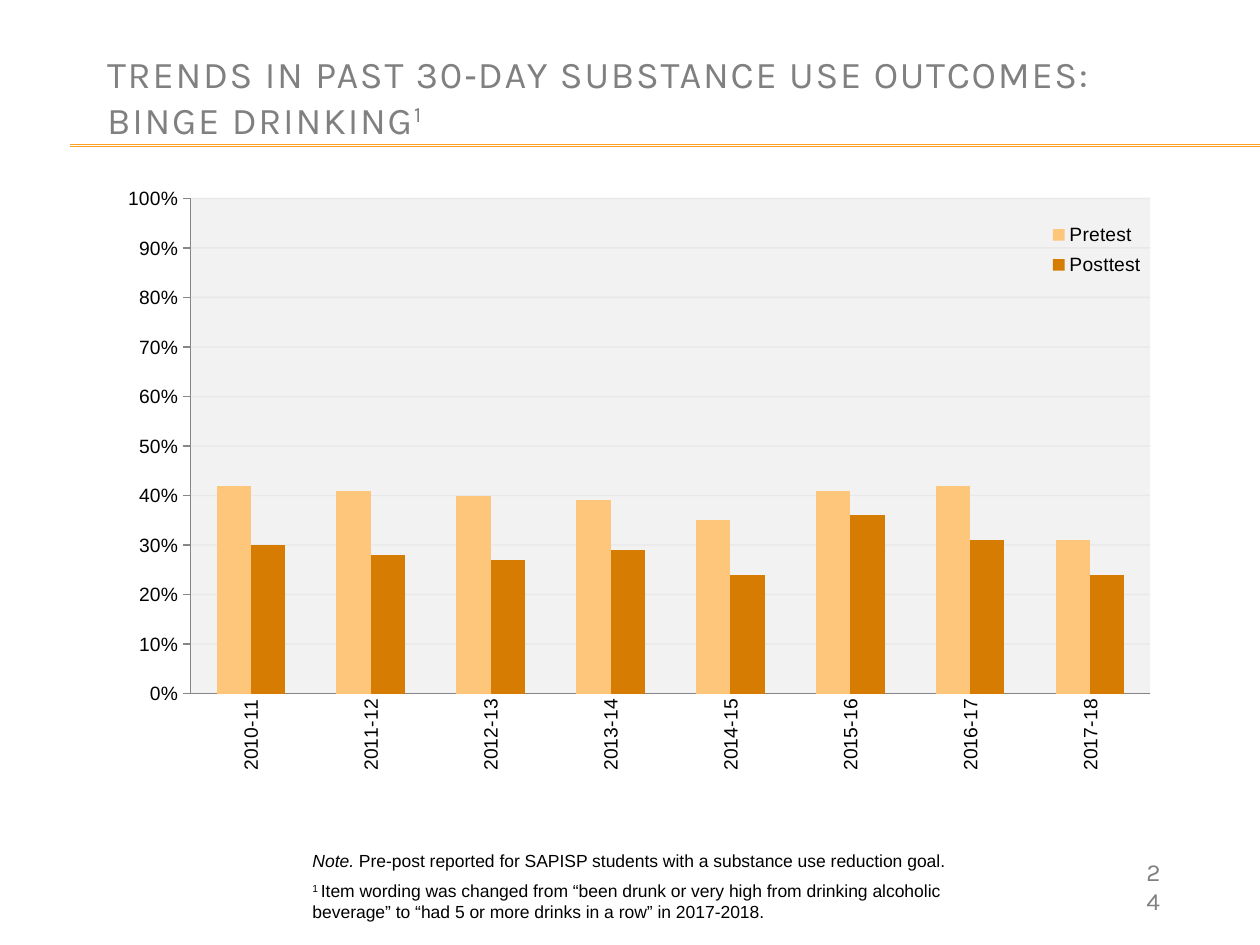
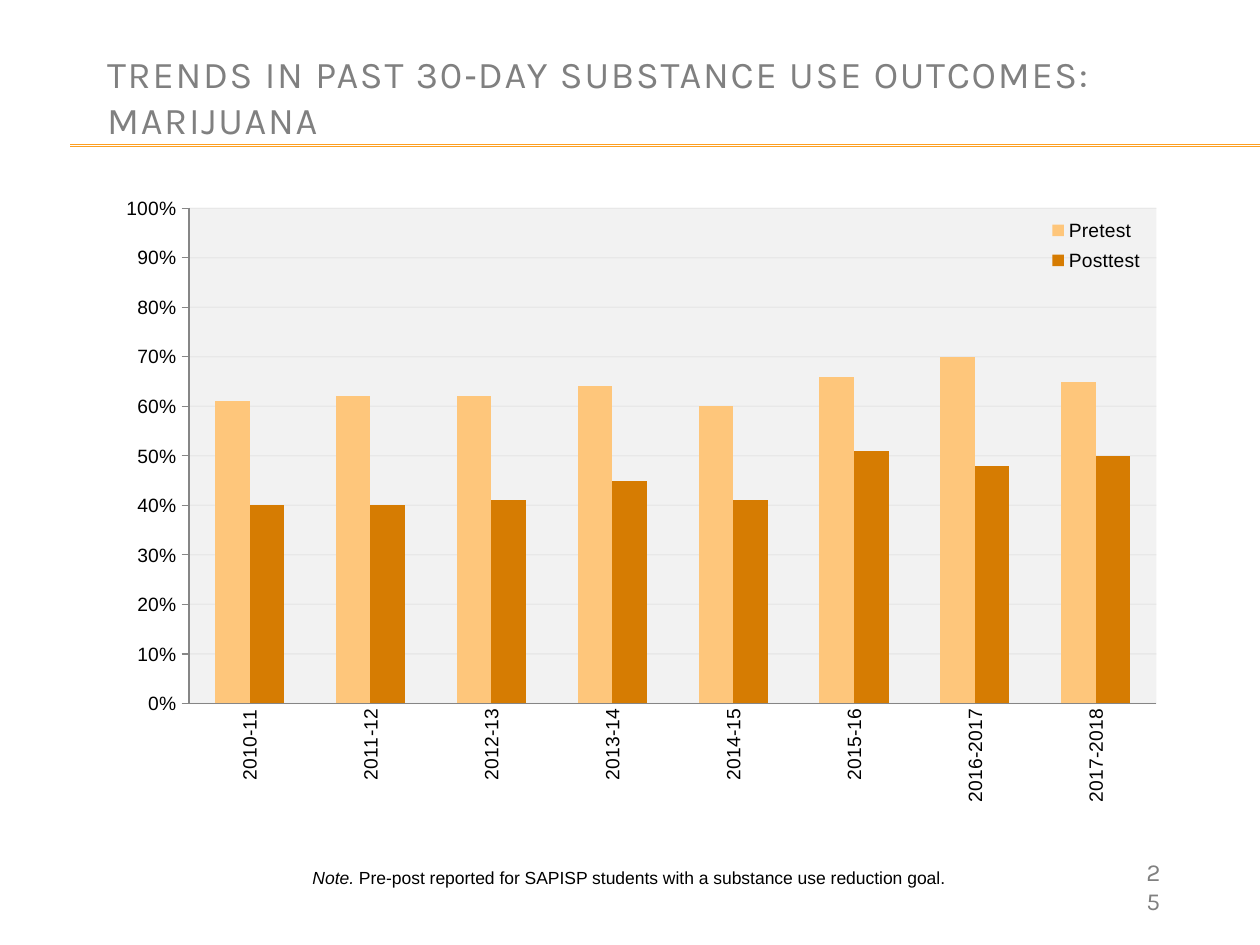
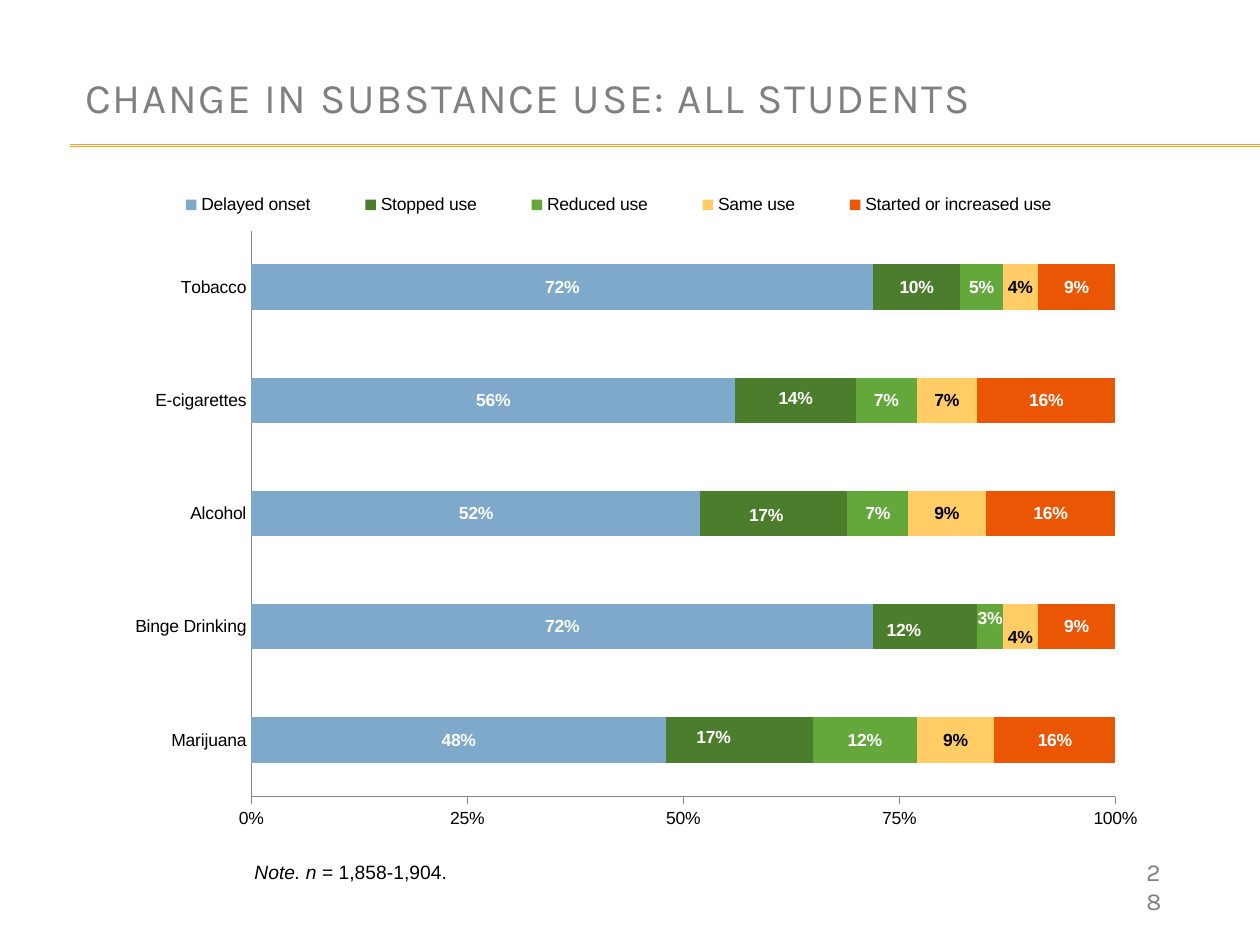
from dataclasses import dataclass

from lxml import etree
from pptx import Presentation
from pptx.chart.data import CategoryChartData
from pptx.dml.color import RGBColor
from pptx.enum.chart import XL_CHART_TYPE, XL_LEGEND_POSITION, XL_TICK_MARK
from pptx.enum.shapes import MSO_CONNECTOR
from pptx.enum.text import MSO_ANCHOR
from pptx.oxml.ns import qn
from pptx.util import Cm, Pt

COLUMNS = XL_CHART_TYPE.COLUMN_CLUSTERED
STACKED_BARS = XL_CHART_TYPE.BAR_STACKED
LEGEND_RIGHT = XL_LEGEND_POSITION.RIGHT
TICK_NONE, TICK_OUTSIDE = XL_TICK_MARK.NONE, XL_TICK_MARK.OUTSIDE
STRAIGHT = MSO_CONNECTOR.STRAIGHT
MIDDLE, TOP = MSO_ANCHOR.MIDDLE, MSO_ANCHOR.TOP


@dataclass(frozen=True)
class Theme:
    heading_font: str = "Karla"
    body_font: str = "Arial"
    heading: str = "808080"
    text: str = "000000"
    light_text: str = "FFFFFF"
    rule: str = "FDA023"
    axis: str = "868686"
    grid: str = "D9D9D9"
    trend_plot: str = "F2F2F2"
    change_plot: str = "FFFFFF"
    pretest: str = "FEC67B"
    posttest: str = "D67C02"
    title_spacing: int = 100
    number_size: float = 14


THEME = Theme()

# Content: text is a list of paragraphs, each a list of (words, style) runs
TREND_TITLE = "TRENDS IN PAST 30‑DAY SUBSTANCE USE OUTCOMES:"
GOAL_NOTE = [("Note.", "italic"),
             (" Pre‑post reported for SAPISP students with a substance use reduction goal.", "")]
YEARS = ["2010-11", "2011-12", "2012-13", "2013-14", "2014-15", "2015-16"]

TREND_SLIDES = [
    {
        "number": 24,
        "title": [[(TREND_TITLE, "")], [("BINGE DRINKING", ""), ("1", "super")]],
        "title_box": (1.91, 0.84, 22.86, 2.21),
        "note": [GOAL_NOTE, [
            ("1 ", "super"),
            ("Item wording was changed from “been drunk or very high from drinking alcoholic "
             "beverage” to “had 5 or more drinks in a row” in 2017-2018.", "")]],
        "note_box": (6.05, 17.02, 13.44, 1.75),
        "years": YEARS + ["2016-17", "2017-18"],
        "pretest": [0.42, 0.41, 0.4, 0.39, 0.35, 0.41, 0.42, 0.31],
        "posttest": [0.3, 0.28, 0.27, 0.29, 0.24, 0.36, 0.31, 0.24],
        "chart_box": (2.11, 3.4, 22.86, 13.64),
        "plot": (0.076, 0.044, 0.846, 0.732),
        "legend": (0.83, 0.07, 0.09, 0.1),
    },
    {
        "number": 25,
        "title": [[(TREND_TITLE, "")], [("MARIJUANA", "")]],
        "title_box": (1.91, 0.84, 21.79, 2.21),
        "note": [GOAL_NOTE],
        "note_box": (6.05, 17.35, 13.34, 0.69),
        "years": YEARS + ["2016-2017", "2017-2018"],
        "pretest": [0.61, 0.62, 0.62, 0.64, 0.6, 0.66, 0.7, 0.65],
        "posttest": [0.4, 0.4, 0.41, 0.45, 0.41, 0.51, 0.48, 0.5],
        "chart_box": (0.84, 3.38, 22.86, 13.64),
        "plot": (0.13, 0.06, 0.853, 0.732),
        "legend": (0.885, 0.065, 0.09, 0.1),
    },
]

CHANGE_SLIDE = {
    "number": 28,
    "title": [[("CHANGE IN SUBSTANCE USE: ALL STUDENTS", "")]],
    "title_box": (1.47, 0.84, 22.86, 2.21),
    "note": [[("Note. n", "italic"), (" = 1,858-1,904.", "")]],
    "note_box": (4.88, 17.22, 13.54, 0.74),
    "substances": ["Marijuana", "Binge Drinking", "Alcohol", "E-cigarettes", "Tobacco"],
    "chart_box": (1.27, 3.38, 22.86, 13.64),
    "plot": (0.166, 0.093, 0.762, 0.837),
    "legend": (0.065, 0.03, 0.85, 0.05),
}
# Name, values, fill, label colour, {point: label offset}
CHANGES = [
    ("Delayed onset", [0.48, 0.72, 0.52, 0.56, 0.72], "7EA9CA", THEME.light_text, {}),
    ("Stopped use", [0.17, 0.12, 0.17, 0.14, 0.1], "4B7D2C", THEME.light_text,
     {0: (-0.023, -0.004), 1: (-0.019, 0.006), 2: (-0.007, 0.003), 3: (0, -0.003)}),
    ("Reduced use", [0.12, 0.03, 0.07, 0.07, 0.05], "64A73B", THEME.light_text,
     {1: (0, -0.013)}),
    ("Same use", [0.09, 0.04, 0.09, 0.07, 0.04], "FFCC66", THEME.text, {1: (0, 0.016)}),
    ("Started or increased use", [0.16, 0.09, 0.16, 0.16, 0.09], "EB5605",
     THEME.light_text, {}),
]


def set_font(font, name, size, color, bold=None):
    font.name, font.size, font.bold = name, Pt(size), bold
    font.color.rgb = RGBColor.from_string(color)


def fill_solid(fill, color):
    fill.solid()
    fill.fore_color.rgb = RGBColor.from_string(color)


# Text
def add_runs(paragraph, runs, font_name, size, color, spacing=0):
    for words, style in runs:
        run = paragraph.add_run()
        run.text = words
        set_font(run.font, font_name, size, color)
        if style == "italic":
            run.font.italic = True
        properties = run.font._element
        if style == "super":
            properties.set("baseline", "30000")
        if spacing:
            properties.set("spc", str(spacing))


def add_text_frame(slide, box, anchor=TOP):
    text_frame = slide.shapes.add_textbox(*map(Cm, box)).text_frame
    text_frame.word_wrap = True
    text_frame.vertical_anchor = anchor
    return text_frame


def add_title(slide, lines, box, size):
    paragraph = add_text_frame(slide, box, MIDDLE).paragraphs[0]
    for index, runs in enumerate(lines):
        if index:
            paragraph.add_line_break()
        add_runs(paragraph, runs, THEME.heading_font, size, THEME.heading,
                 THEME.title_spacing)


def add_note(slide, paragraphs, box, size):
    text_frame = add_text_frame(slide, box)
    for index, runs in enumerate(paragraphs):
        paragraph = text_frame.add_paragraph() if index else text_frame.paragraphs[0]
        if index:
            paragraph.space_before = Pt(size / 2)
        add_runs(paragraph, runs, THEME.body_font, size, THEME.text)


def add_base_slide(presentation, content, title_size, note_size):
    slide = presentation.slides.add_slide(presentation.slide_layouts[6])
    # Double rule under the title
    for height in (2.92, 2.95):
        rule = slide.shapes.add_connector(STRAIGHT, Cm(1.42), Cm(height),
                                          Cm(25.4), Cm(height))
        rule.line.color.rgb = RGBColor.from_string(THEME.rule)
        rule.line.width = Pt(0.75)
        etree.SubElement(rule._element.spPr, qn("a:effectLst"))
    # Slide number
    number = add_text_frame(slide, (22.86, 17.15, 1.02, 0.86)).paragraphs[0]
    add_runs(number, [(str(content["number"]), "")], THEME.heading_font,
             THEME.number_size, THEME.heading)
    add_title(slide, content["title"], content["title_box"], title_size)
    add_note(slide, content["note"], content["note_box"], note_size)
    return slide


# Charts
def make_layout(values, modes=()):
    layout = etree.Element(qn("c:layout"))
    manual = etree.SubElement(layout, qn("c:manualLayout"))
    for tag, value in (*modes, *zip("xywh", values)):
        etree.SubElement(manual, qn(f"c:{tag}")).set("val", str(value))
    return layout


def place_part(element, box, inner=False):
    """Put a plot area or legend at fractions of the chart's size."""
    for old_layout in element.findall(qn("c:layout")):
        element.remove(old_layout)
    modes = [("xMode", "edge"), ("yMode", "edge")]
    if inner:
        modes.insert(0, ("layoutTarget", "inner"))
        element.insert(0, make_layout(box, modes))
    else:
        element.find(qn("c:legendPos")).addnext(make_layout(box, modes))


def add_base_chart(slide, kind, content, categories, series, size, major, plot_color):
    chart_data = CategoryChartData(number_format="0%")
    chart_data.categories = categories
    for name, values, _ in series:
        chart_data.add_series(name, values)
    chart = slide.shapes.add_chart(kind, *map(Cm, content["chart_box"]), chart_data).chart
    chart.has_title = False
    set_font(chart.font, THEME.body_font, size, THEME.text)

    plot = chart.plots[0]
    plot.gap_width, plot.vary_by_categories = 150, False
    for item, (_, _, color) in zip(plot.series, series):
        fill_solid(item.format.fill, color)

    # Axes
    value_axis = chart.value_axis
    value_axis.minimum_scale, value_axis.maximum_scale = 0, 1
    value_axis.major_unit = major
    value_axis.has_major_gridlines = False
    value_axis.tick_labels.number_format = "0%"
    value_axis.tick_labels.number_format_is_linked = False
    for axis, tick in ((chart.category_axis, TICK_NONE), (value_axis, TICK_OUTSIDE)):
        axis.major_tick_mark, axis.minor_tick_mark = tick, TICK_NONE
        axis.format.line.color.rgb = RGBColor.from_string(THEME.axis)
        axis.format.line.width = Pt(0.75)
        set_font(axis.tick_labels.font, THEME.body_font, size, THEME.text)

    # Legend and plot area
    chart.has_legend = True
    chart.legend.position = LEGEND_RIGHT
    chart.legend.include_in_layout = True
    set_font(chart.legend.font, THEME.body_font, size, THEME.text)
    place_part(chart.legend._element, content["legend"])
    plot_area = chart._chartSpace.chart.plotArea
    place_part(plot_area, content["plot"], inner=True)
    properties = etree.SubElement(plot_area, qn("c:spPr"))
    solid = etree.SubElement(properties, qn("a:solidFill"))
    etree.SubElement(solid, qn("a:srgbClr")).set("val", plot_color)
    return chart


def add_trend_chart(slide, content):
    series = [("Pretest", content["pretest"], THEME.pretest),
              ("Posttest", content["posttest"], THEME.posttest)]
    chart = add_base_chart(slide, COLUMNS, content, content["years"], series,
                           11, 0.1, THEME.trend_plot)
    chart.plots[0].overlap = 0
    # Upright year labels
    body = chart.category_axis._element.find(qn("c:txPr")).find(qn("a:bodyPr"))
    body.set("rot", "-5400000")
    body.set("vert", "horz")
    # Faint gridlines
    line = chart.value_axis.major_gridlines.format.line
    line.color.rgb = RGBColor.from_string(THEME.grid)
    line.width = Pt(0.75)
    for color in chart.value_axis.major_gridlines._xAx.iter(qn("a:srgbClr")):
        if color.get("val") == THEME.grid:
            etree.SubElement(color, qn("a:alpha")).set("val", "40000")


def add_change_chart(slide, content):
    series = [change[:3] for change in CHANGES]
    chart = add_base_chart(slide, STACKED_BARS, content, content["substances"], series,
                           10, 0.25, THEME.change_plot)
    plot = chart.plots[0]
    plot.overlap = 100
    for item, (_, _, _, color, offsets) in zip(plot.series, CHANGES):
        labels = item.data_labels
        labels.show_value = True
        labels.number_format, labels.number_format_is_linked = "0%", False
        set_font(labels.font, THEME.body_font, 10, color, True)
        # Labels moved off the middle of their bar
        for point in offsets:
            set_font(item.points[point].data_label.font, THEME.body_font, 10, color, True)
        for label in labels._element.findall(qn("c:dLbl")):
            index = label.find(qn("c:idx"))
            number_format = etree.Element(qn("c:numFmt"), formatCode="0%", sourceLinked="0")
            index.addnext(number_format)
            index.addnext(make_layout(offsets[int(index.get("val"))]))


def main():
    presentation = Presentation()
    presentation.slide_width, presentation.slide_height = Cm(25.4), Cm(19.05)
    for content in TREND_SLIDES:
        add_trend_chart(add_base_slide(presentation, content, 21.6, 10), content)
    add_change_chart(add_base_slide(presentation, CHANGE_SLIDE, 24, 11), CHANGE_SLIDE)
    presentation.save("out.pptx")


if __name__ == "__main__":
    main()
